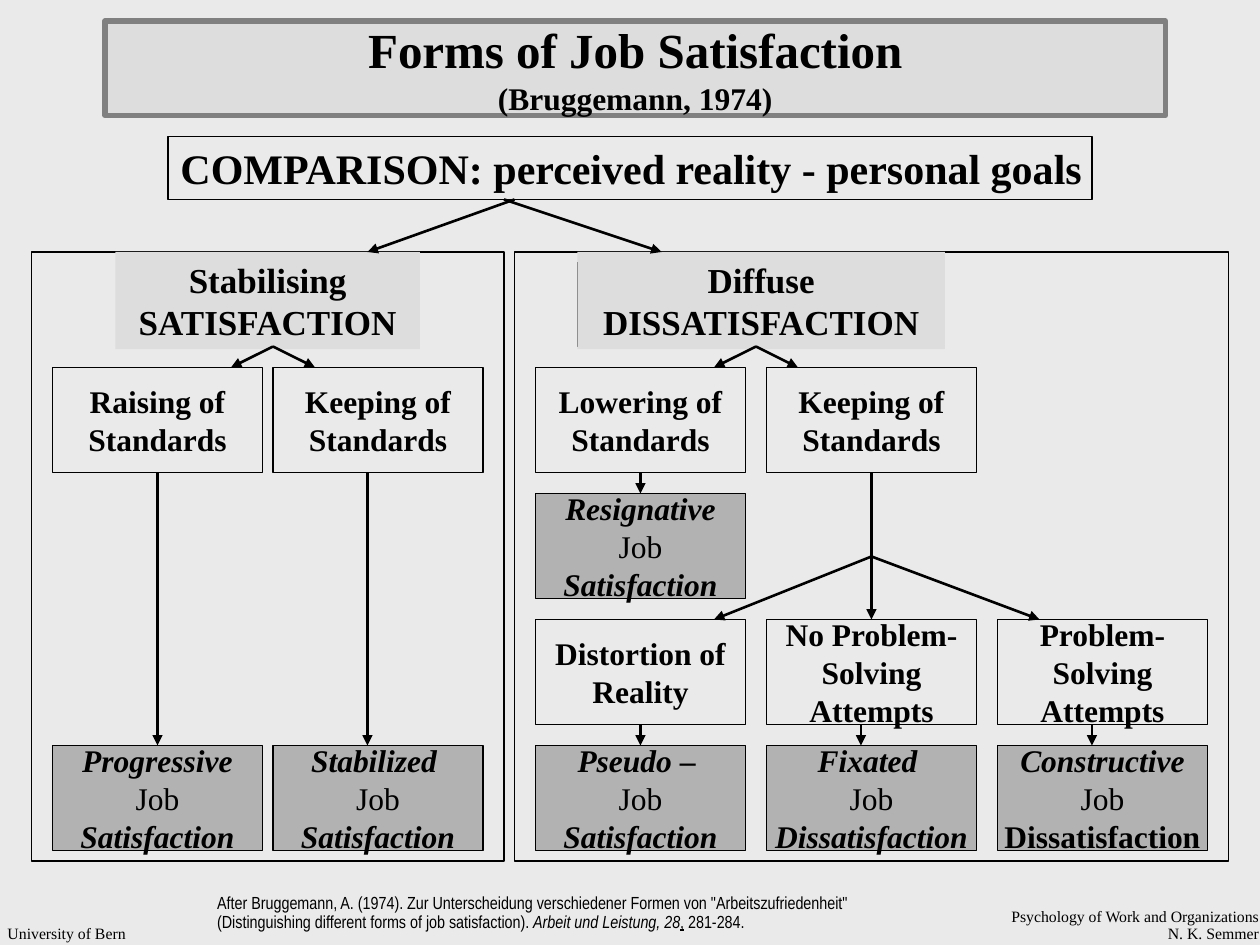
from lxml import etree
from pptx import Presentation
from pptx.dml.color import RGBColor
from pptx.enum.shapes import MSO_CONNECTOR, MSO_SHAPE
from pptx.enum.text import MSO_ANCHOR, PP_ALIGN
from pptx.oxml.ns import qn
from pptx.util import Inches, Pt

BLACK = RGBColor(0x00, 0x00, 0x00)
PAPER = RGBColor(0xEA, 0xEA, 0xEA)
LIGHT = RGBColor(0xDD, 0xDD, 0xDD)
MID = RGBColor(0xB2, 0xB2, 0xB2)
DARK = RGBColor(0x80, 0x80, 0x80)
LEFT, CENTER, RIGHT = PP_ALIGN.LEFT, PP_ALIGN.CENTER, PP_ALIGN.RIGHT
TOP, MIDDLE = MSO_ANCHOR.TOP, MSO_ANCHOR.MIDDLE
RECTANGLE, STRAIGHT = MSO_SHAPE.RECTANGLE, MSO_CONNECTOR.STRAIGHT
SERIF, NARROW = "Times New Roman", "Arial Narrow"
CELL = Inches(1) / 12
CARD_W, CARD_H = 20, 10


class Diagram:
    """Draws boxes, text and arrows on a slide grid of 120 columns by 90 rows."""

    def __init__(self, slide):
        self.s = slide
        self.sides = {}
        fill = slide.background.fill
        fill.solid()
        fill.fore_color.rgb = PAPER

    def grid(self, *cells):
        return [round(c * CELL) for c in cells]

    def label(self, sp, runs, size, align=CENTER, anchor=MIDDLE, font=SERIF,
              insets=(0.05, 0.05), spacing=None):
        tf = sp.text_frame
        tf.word_wrap = True
        tf.vertical_anchor = anchor
        tf.margin_left, tf.margin_right = map(Inches, insets)
        p = tf.paragraphs[0]
        p.alignment = align
        p.line_spacing = spacing
        for text, style, *own_size in runs:
            for i, line in enumerate(text.split("\n")):
                if i:
                    p.add_line_break()
                if not line:
                    continue
                r = p.add_run()
                r.text = line
                r.font.name = font
                r.font.size = Pt(own_size[0] if own_size else size)
                r.font.color.rgb = BLACK
                r.font.bold = "b" in style
                r.font.italic = "i" in style
                r.font.underline = "u" in style

    def box(self, x, y, w, h, fill=None, line=BLACK, width=0.75):
        sp = self.s.shapes.add_shape(RECTANGLE, *self.grid(x, y, w, h))
        sp.shadow.inherit = False
        if fill is None:
            sp.fill.background()
        else:
            sp.fill.solid()
            sp.fill.fore_color.rgb = fill
        if line is None:
            sp.line.fill.background()
        else:
            sp.line.color.rgb = line
            sp.line.width = Pt(width)
        return sp

    def card(self, x, y, runs, fill=None):
        sp = self.box(x, y, CARD_W, CARD_H, fill)
        self.label(sp, runs, 18)
        mid = x + CARD_W / 2
        self.sides[mid, y] = sp, 0
        self.sides[mid, y + CARD_H] = sp, 2

    def text(self, x, y, w, h, runs, size, **style):
        sp = self.s.shapes.add_textbox(*self.grid(x, y, w, h))
        self.label(sp, runs, size, anchor=TOP, **style)

    def arrow(self, start, end):
        cx = self.s.shapes.add_connector(STRAIGHT, *self.grid(*start, *end))
        cx.line.color.rgb = BLACK
        cx.line.width = Pt(1.5)
        sp_pr = cx._element.spPr
        etree.SubElement(sp_pr.find(qn("a:ln")), qn("a:tailEnd"), type="triangle")
        etree.SubElement(sp_pr, qn("a:effectLst"))
        if start in self.sides:
            cx.begin_connect(*self.sides[start])
        if end in self.sides:
            cx.end_connect(*self.sides[end])


def main():
    prs = Presentation()
    prs.slide_width, prs.slide_height = Inches(10), Inches(7.5)
    d = Diagram(prs.slides.add_slide(prs.slide_layouts[6]))

    d.text(65, 86, 55, 4,
           [("Psychology of Work and Organizations\nN. K. Semmer", "")], 9,
           align=RIGHT, insets=(0, 0.01), spacing=0.9)
    d.text(0, 87.4, 54, 2.6, [("University of Bern", "")], 9,
           align=LEFT, insets=(0.06, 0))

    title = d.box(10, 2, 101, 9, LIGHT, DARK, 3)
    d.label(title, [("Forms of Job Satisfaction\n", "b"),
                    ("(Bruggemann, 1974)", "b", 18)], 28)
    comparison = d.box(16, 13, 88, 6)
    d.label(comparison, [("COMPARISON: perceived reality - personal goals", "b")],
            24, align=LEFT, insets=(0.1, 0))

    d.box(3, 24, 45, 58)
    d.box(49, 24, 68, 58)
    d.box(55, 25, 34, 8)
    for x, w, name in ((11, 29, "Stabilising SATISFACTION"),
                       (55, 35, "Diffuse DISSATISFACTION")):
        heading = d.box(x, 24, w, 9.25, LIGHT, None)
        d.label(heading, [(name, "b")], 20)

    cols = raising, keeping, lowering, fixed, solving = 5, 26, 51, 73, 95
    for x, y, name in ((raising, 35, "Raising of Standards"),
                       (keeping, 35, "Keeping of Standards"),
                       (lowering, 35, "Lowering of Standards"),
                       (fixed, 35, "Keeping of Standards"),
                       (lowering, 59, "Distortion of Reality"),
                       (fixed, 59, "No Problem-Solving Attempts"),
                       (solving, 59, "Problem-Solving Attempts")):
        d.card(x, y, [(name, "b")])

    outcomes = (
        [("Progressive ", "bi"), ("Job ", ""), ("Satisfaction", "bi")],
        [("Stabilized \n", "bi"), ("Job ", ""), ("Satisfaction", "bi")],
        [("Pseudo ", "bi"), ("– \n", "b"), ("Job ", ""), ("Satisfaction", "bi")],
        [("Fixated \n", "bi"), ("Job ", ""), ("Dissatisfaction", "bi")],
        [("Constructive ", "bi"), ("Job", ""), (" Dissatisfaction", "b")],
    )
    for x, runs in zip(cols, outcomes):
        d.card(x, 71, runs, MID)
    d.card(lowering, 47,
           [("Resignative ", "bi"), ("Job ", ""), ("Satisfaction", "bi")], MID)

    for x, top, bottom in ((35, 45, 71), (15, 45, 71), (83, 45, 59), (61, 45, 47),
                           (61, 69, 71), (82, 69, 71), (104, 69, 71)):
        d.arrow((x, top), (x, bottom))
    for start, end in (((83, 53), (99, 59)), ((83, 53), (68, 59)),
                       ((72, 33), (68, 35)), ((72, 33), (76, 35)),
                       ((26, 33), (22, 35)), ((26, 33), (30, 35)),
                       ((49, 19), (35, 24)), ((48, 19), (63, 24))):
        d.arrow(start, end)

    d.text(19.5, 84.6, 69, 4.8,
           [("After Bruggemann, A. (1974). Zur Unterscheidung verschiedener Formen von "
             "\"Arbeitszufriedenheit\" (Distinguishing different forms of job "
             "satisfaction). ", ""),
            ("Arbeit und Leistung, 28", "i"), (",", "u"), (" 281-284.", "")],
           10, align=LEFT, font=NARROW, insets=(0.1, 0.1), spacing=0.9)

    prs.save("out.pptx")


if __name__ == "__main__":
    main()
